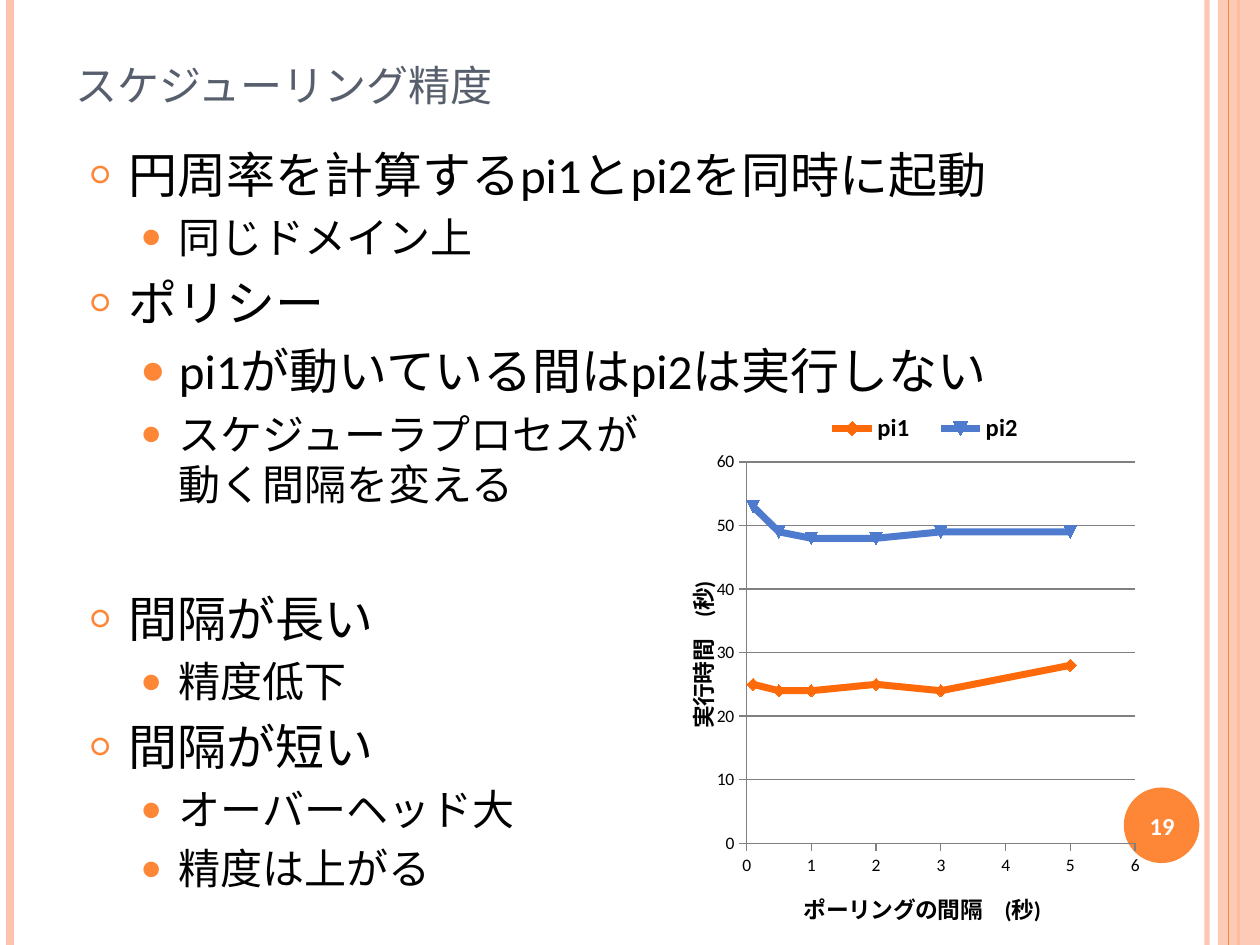
import lxml.etree
import pptx
import pptx.chart.data
import pptx.dml.color
import pptx.enum.chart
import pptx.enum.shapes
import pptx.enum.text
import pptx.oxml.ns
import pptx.util

Pt = pptx.util.Pt
qn = pptx.oxml.ns.qn
rgb = pptx.dml.color.RGBColor.from_string
ORANGE, PINK, BLUE, GREY = "FE8637", "FEC3AE", "7598D9", "808080"


def add_text(tf, text, size, color="000000", bold=False, align=None, before=0,
             bullet=None, bullet_size=100, indent=0, first=False):
    """Add one Calibri paragraph, with a hanging bullet if one is given."""
    p = tf.paragraphs[0] if first else tf.add_paragraph()
    p.text, p.alignment, p.space_before = text, align, Pt(before)
    for r in p.runs:
        r.font.name, r.font.size, r.font.bold = "Calibri", Pt(size), bold
        r.font.color.rgb = rgb(color)
    if bullet:
        pPr = p._p.get_or_add_pPr()
        pPr.set("marL", str(Pt(indent)))
        pPr.set("indent", str(-Pt(21.6)))
        clr = lxml.etree.SubElement(pPr, qn("a:buClr"))
        lxml.etree.SubElement(clr, qn("a:srgbClr"), val=ORANGE)
        lxml.etree.SubElement(pPr, qn("a:buSzPct"), val=str(bullet_size * 1000))
        lxml.etree.SubElement(pPr, qn("a:buFont"), typeface="Calibri")
        lxml.etree.SubElement(pPr, qn("a:buChar"), char=bullet)
    return p


prs = pptx.Presentation()
prs.slide_width, prs.slide_height = Pt(720), Pt(540)
s = prs.slides.add_slide(prs.slide_layouts[6])

# Side stripes, back to front, with the translucent band among them
for x, color, width, alpha in [(689.8, PINK, 3, 93), (5.8, PINK, 4.5, 100),
                               (707.8, ORANGE, 1.5, 100), (None, PINK, 0, 87),
                               (702, ORANGE, 0.75, 100)]:
    if x is None:
        sp = s.shapes.add_shape(pptx.enum.shapes.MSO_SHAPE.RECTANGLE,
                                Pt(696), Pt(0), Pt(24), Pt(540))
        sp.shadow.inherit = False
        sp.line.fill.background()
        fill = sp.fill
        fill.solid()
        fill.fore_color.rgb = rgb(color)
    else:
        sp = s.shapes.add_connector(pptx.enum.shapes.MSO_CONNECTOR.STRAIGHT,
                                    Pt(x), Pt(0), Pt(x), Pt(540))
        sp.line.color.rgb = rgb(color)
        sp.line.width = Pt(width)
        lxml.etree.SubElement(sp._element.spPr, qn("a:effectLst"))
    if alpha < 100:
        clr = next(sp._element.spPr.iter(qn("a:srgbClr")))
        lxml.etree.SubElement(clr, qn("a:alpha"), val=str(alpha * 1000))

# Page number disc
sp = s.shapes.add_shape(pptx.enum.shapes.MSO_SHAPE.OVAL,
                        Pt(642.2), Pt(450), Pt(43.2), Pt(43.2))
sp.shadow.inherit = False
sp.fill.solid()
sp.fill.fore_color.rgb = rgb(ORANGE)
sp.line.fill.background()

# Title
tf = s.shapes.add_textbox(Pt(36), Pt(21.6), Pt(588), Pt(46)).text_frame
tf.word_wrap = True
tf.vertical_anchor = pptx.enum.text.MSO_ANCHOR.BOTTOM
p = add_text(tf, "スケジューリング精度", 30, "575F6D", first=True)
p.runs[0].font._element.set("cap", "small")

# Bullet list: level, size, text
tf = s.shapes.add_textbox(Pt(44.8), Pt(78.8), Pt(624), Pt(450)).text_frame
tf.word_wrap = True
points = [
    (0, 28, "円周率を計算するpi1とpi2を同時に起動"),
    (1, 24, "同じドメイン上"),
    (0, 28, "ポリシー"),
    (1, 28, "pi1が動いている間はpi2は実行しない"),
    (1, 24, "スケジューラプロセスが\n動く間隔を変える"),
    (0, 28, "間隔が長い"),
    (1, 24, "精度低下"),
    (0, 28, "間隔が短い"),
    (1, 24, "オーバーヘッド大"),
    (1, 24, "精度は上がる"),
]
for i, (level, size, text) in enumerate(points):
    p = add_text(tf, text, size, first=i == 0,
                 before=0.2 * size if level else 6,
                 bullet="○●"[level], bullet_size=(70, 80)[level],
                 indent=(21.6, 50.4)[level])
    p.level = level
    if text == "間隔が長い":
        p.space_before = Pt(45.5)  # sets the conclusions apart

# Chart of run time against polling interval
intervals = [0.1, 0.5, 1, 2, 3, 5]
data = pptx.chart.data.XyChartData()
for name, times in [("pi1", [25, 24, 24, 25, 24, 28]),
                    ("pi2", [53, 49, 48, 48, 49, 49])]:
    series = data.add_series(name)
    for x, y in zip(intervals, times):
        series.add_data_point(x, y)
chart = s.shapes.add_chart(pptx.enum.chart.XL_CHART_TYPE.XY_SCATTER_LINES,
                           Pt(388), Pt(230.4), Pt(275.8), Pt(320.4), data).chart
chart.has_title = False
chart.font.name, chart.font.size = "Calibri", Pt(10)
chart.font.color.rgb = rgb("000000")
chart.plots[0].vary_by_categories = False
for i, (series, color) in enumerate(zip(chart.plots[0].series, (ORANGE, BLUE)), 1):
    series.smooth = False
    series.format.line.width = Pt(4)
    series.format.line.color.rgb = rgb(color)
    series.format.line.color.brightness = -0.15
    series.marker.size = 7
    # The index picks the automatic marker: diamond, then triangle
    series._element.find(qn("c:idx")).set("val", str(i))

# Axes
for axis, title, top, step in [(chart.category_axis, "ポーリングの間隔　(秒)", 6, 1),
                               (chart.value_axis, "実行時間　(秒)", 60, 10)]:
    axis.minimum_scale, axis.maximum_scale, axis.major_unit = 0, top, step
    axis.major_tick_mark = pptx.enum.chart.XL_TICK_MARK.OUTSIDE
    axis.tick_labels.number_format = "General"
    axis.tick_labels.number_format_is_linked = False
    axis.format.line.color.rgb = rgb(GREY)
    add_text(axis.axis_title.text_frame, title, 13, bold=True, first=True)
chart.category_axis.has_major_gridlines = False
chart.value_axis.has_major_gridlines = True
chart.value_axis.major_gridlines.format.line.color.rgb = rgb(GREY)
body = chart.value_axis.axis_title.text_frame._txBody.find(qn("a:bodyPr"))
body.set("rot", "-5400000")
body.set("vert", "horz")

# Legend
chart.has_legend = True
legend = chart.legend
legend.position = pptx.enum.chart.XL_LEGEND_POSITION.RIGHT
legend.include_in_layout = False
legend.font.name, legend.font.size, legend.font.bold = "Calibri", Pt(14), True

# Places of the chart parts, as shares of the chart: x, y, w, h
for el, index, place in [
    (chart._chartSpace.chart.plotArea, 0, (0.14, 0.105, 0.805, 0.68)),
    (legend._element, 1, (0.27, 0.01, 0.48, 0.07)),
    (chart.category_axis.axis_title._element, 1, (0.25, 0.86)),
    (chart.value_axis.axis_title._element, 1, (0, 0.31)),
]:
    for old in el.findall(qn("c:layout")):
        el.remove(old)
    layout = lxml.etree.Element(qn("c:layout"))
    el.insert(index, layout)
    manual = lxml.etree.SubElement(layout, qn("c:manualLayout"))
    if index == 0:
        lxml.etree.SubElement(manual, qn("c:layoutTarget"), val="inner")
    for axis_name in "xy":
        lxml.etree.SubElement(manual, qn(f"c:{axis_name}Mode"), val="edge")
    for key, share in zip("xywh", place):
        lxml.etree.SubElement(manual, qn(f"c:{key}"), val=str(share))

# Page number
tf = s.shapes.add_textbox(Pt(640), Pt(451.4), Pt(48.2), Pt(41)).text_frame
tf.word_wrap = True
tf.vertical_anchor = pptx.enum.text.MSO_ANCHOR.MIDDLE
add_text(tf, "19", 14, "FFFFFF", bold=True, first=True,
         align=pptx.enum.text.PP_ALIGN.CENTER)

prs.save("out.pptx")
